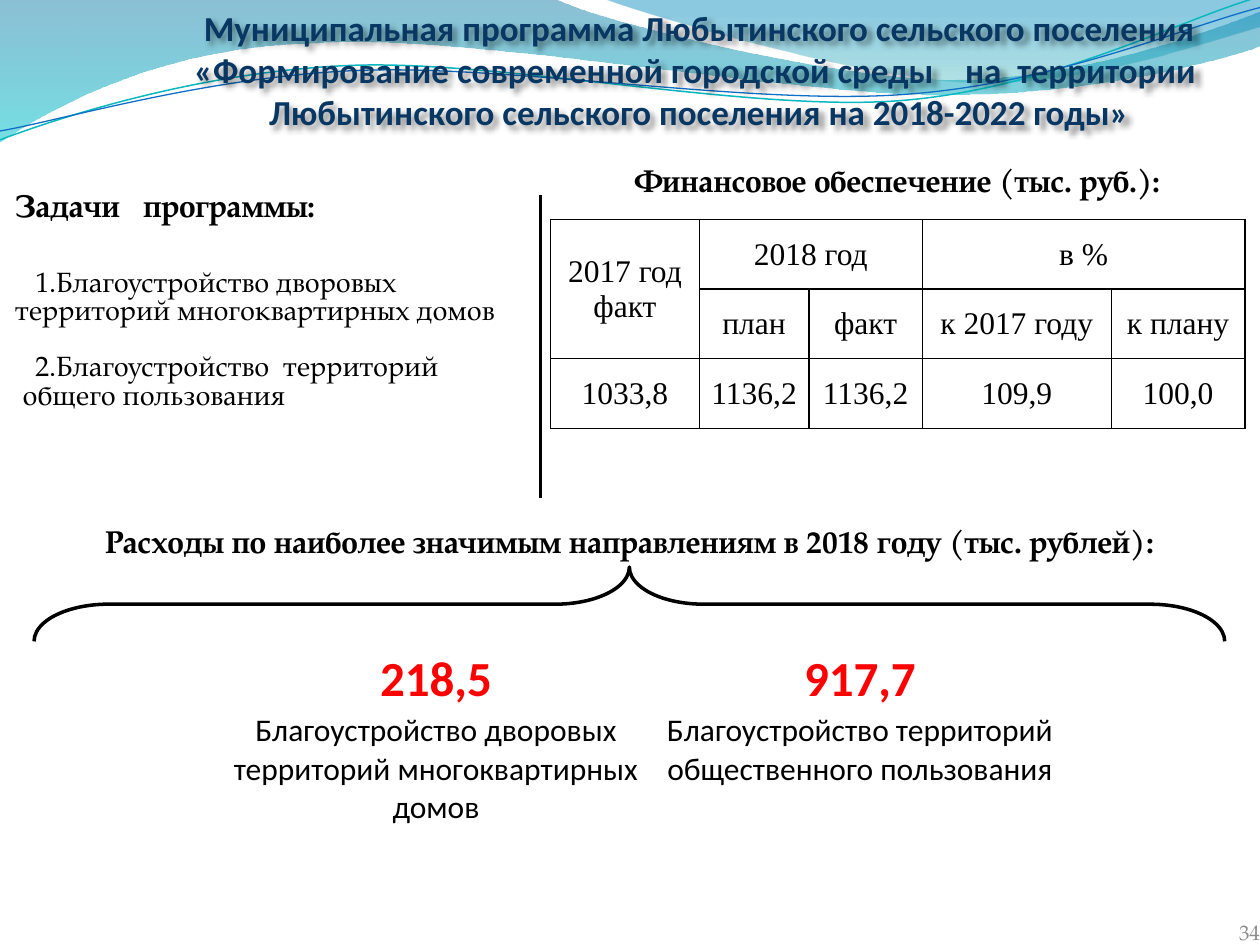
import math

from lxml import etree
from pptx import Presentation
from pptx import util as u
from pptx.dml.color import RGBColor
from pptx.enum import shapes, text
from pptx.oxml.ns import qn

SERIF, SANS, TABLE_FONT = "TeX Gyre Pagella", "Calibri", "Times New Roman"
CENTER, RIGHT = text.PP_ALIGN.CENTER, text.PP_ALIGN.RIGHT
TOP, MIDDLE, BOTTOM = (text.MSO_ANCHOR.TOP, text.MSO_ANCHOR.MIDDLE,
                       text.MSO_ANCHOR.BOTTOM)
WAVE_TILT = -2.7


def color(value):
    return RGBColor.from_string(value)


def add_node(parent, tag, **attributes):
    return etree.SubElement(parent, qn(tag), attributes)


def write(paragraph, words, size, font=SERIF, fill="000000", bold=False, **layout):
    run = paragraph.add_run()
    run.text = words
    for name, value in dict(size=u.Pt(size), name=font, bold=bold).items():
        setattr(run.font, name, value)
    run.font.color.rgb = color(fill)
    for name, value in layout.items():
        setattr(paragraph, name, value)


def add_text(slide, box, words, size, anchor=TOP, margins=(0.1, 0.05), **style):
    shape = slide.shapes.add_textbox(*map(u.Inches, box))
    horizontal, vertical = map(u.Inches, margins)
    settings = dict(word_wrap=True, vertical_anchor=anchor,
                    margin_left=horizontal, margin_right=horizontal,
                    margin_top=vertical, margin_bottom=vertical)
    for name, value in settings.items():
        setattr(shape.text_frame, name, value)
    write(shape.text_frame.paragraphs[0], words, size, **style)
    return shape


def add_table(slide, left, top, columns, rows):
    frame = slide.shapes.add_table(len(rows), len(columns), u.Inches(left), u.Inches(top),
                                   u.Inches(sum(columns)), u.Inches(sum(rows)))
    table = frame.table
    table.first_row = table.horz_banding = False
    for column, width in zip(table.columns, columns):
        column.width = u.Inches(width)
    for row, height in zip(table.rows, rows):
        row.height = u.Inches(height)
    return table


def format_cell(cell, anchor=TOP, margin=0.01, edges="", width=1):
    """Draw only the named edges, a string of the letters L, R, T and B."""
    properties = cell._tc.get_or_add_tcPr()
    for edge in "LRTB":
        line = add_node(properties, f"a:ln{edge}", w=str(u.Pt(width)))
        if edge in edges:
            add_node(add_node(line, "a:solidFill"), "a:srgbClr", val="000000")
        else:
            add_node(line, "a:noFill")
    cell.fill.background()
    cell.vertical_anchor = anchor
    for side in ("left", "right", "top", "bottom"):
        setattr(cell, f"margin_{side}", u.Inches(margin))


def add_curve(slide, start, segments, close):
    """Outline of straight segments (one point) and cubic segments (three points)."""
    ends = [tuple(map(u.Inches, segment[-1])) for segment in segments]
    builder = slide.shapes.build_freeform(*map(u.Inches, start), scale=1.0)
    builder.add_line_segments(ends, close=close)
    shape = builder.convert_to_shape()
    shape.shadow.inherit = False
    lines = list(shape._element.iter(qn("a:lnTo")))
    for line, segment in zip(lines, segments):
        if len(segment) == 3:
            curve = etree.Element(qn("a:cubicBezTo"))
            for x, y in segment:
                add_node(curve, "a:pt", x=str(u.Inches(x) - shape.left),
                         y=str(u.Inches(y) - shape.top))
            line.getparent().replace(line, curve)
    return shape


def add_wave(slide, start, segments, stops):
    """Area with a top-to-bottom gradient of (position, colour, opacity) stops in percent."""
    shape = add_curve(slide, start, segments, True)
    shape.line.fill.background()
    shape.fill.gradient()
    gradient = shape._element.spPr.find(qn("a:gradFill"))
    for child in list(gradient):
        gradient.remove(child)
    stop_list = add_node(gradient, "a:gsLst")
    for position, value, opacity in stops:
        stop = add_node(stop_list, "a:gs", pos=str(position * 1000))
        add_node(add_node(stop, "a:srgbClr", val=value), "a:alpha", val=str(opacity * 1000))
    add_node(gradient, "a:lin", ang="5400000", scaled="0")


def add_wave_line(slide, center, start, segments, value, width):
    """Points are where they end up after the tilt about the center."""
    cosine, sine = (f(math.radians(-WAVE_TILT)) for f in (math.cos, math.sin))

    def level(point):
        x, y = point[0] - center[0], point[1] - center[1]
        return center[0] + x * cosine - y * sine, center[1] + x * sine + y * cosine

    shape = add_curve(slide, level(start),
                      [[level(point) for point in segment] for segment in segments], False)
    shape.rotation = WAVE_TILT
    shape.fill.background()
    shape.line.color.rgb = color(value)
    shape.line.width = u.Pt(width)


def add_header_waves(slide):
    add_wave(slide, (0, 0), [
        [(4.4, -0.01)],
        [(4.76, 0.17), (6.64, 0.63), (7.58, 0.63)],
        [(8.53, 0.63), (9.58, 0.26), (10, 0.09)],
        [(10.01, 0.36)],
        [(9.83, 0.44), (8.7, 0.76), (7.46, 0.75)],
        [(6.22, 0.75), (3.82, 0.28), (2.57, 0.34)],
        [(1.29, 0.36), (0.46, 0.83), (-0.01, 1.13)],
    ], [(0, "0074A1", 45), (100, "00C6CF", 55)])
    add_wave(slide, (4.79, -0.01), [
        [(5.09, 0.11), (6.82, 0.62), (7.69, 0.65)],
        [(8.56, 0.69), (9.61, 0.32), (10, 0.21)],
        [(10, 0)],
    ], [(20, "008BBF", 45), (100, "00A1A9", 30)])
    add_wave_line(slide, (4.99, 0.57), (0, 1.11), [
        [(0.48, 0.93), (1.58, 0.57), (2.77, 0.52)],
        [(3.95, 0.47), (5.93, 0.89), (7.13, 0.8)],
        [(8.33, 0.71), (9.38, 0.15), (9.98, -0.02)],
    ], "0AB8BF", 0.85)
    add_wave_line(slide, (5, 0.59), (0, 1.04), [
        [(0.47, 0.96), (1.64, 0.61), (2.83, 0.56)],
        [(4.03, 0.51), (5.97, 0.84), (7.17, 0.75)],
        [(8.36, 0.67), (9.41, 0.21), (10, 0.06)],
    ], "0F6FC6", 0.75)


def add_title(slide, box):
    shape = add_text(slide, box, "Муниципальная программа Любытинского сельского поселения "
                     "«Формирование современной городской среды    на  территории  "
                     "Любытинского сельского поселения на 2018-2022 годы»",
                     20, font=SANS, fill="083763", bold=True, alignment=CENTER)
    effects = add_node(shape._element.spPr, "a:effectLst")
    shadow = add_node(effects, "a:outerShdw", blurRad="38100", dist="38100", dir="2700000")
    add_node(add_node(shadow, "a:srgbClr", val="000000"), "a:alpha", val="43000")


def add_funding(slide, left, top):
    table = add_table(slide, left, top, [1.18, 0.87, 0.9, 1.5, 1.06], [2.21 / 4] * 4)
    rows = [["Финансовое обеспечение (тыс. руб.):"],
            ["2017 год факт", "2018 год", "", "в %", ""],
            ["", "план", "факт", "к 2017 году", "к плану"],
            ["1033,8", "1136,2", "1136,2", "109,9", "100,0"]]
    for first, last in [((0, 0), (0, 4)), ((1, 0), (2, 0)), ((1, 1), (1, 2)), ((1, 3), (1, 4))]:
        table.cell(*first).merge(table.cell(*last))
    for index, row in enumerate(table.rows):
        heading = index == 0
        for cell in row.cells:
            format_cell(cell, MIDDLE, 0.01 if index == 3 else 0.04, "B" if heading else "LRTB")
        for cell, words in zip(row.cells, rows[index]):
            if words:
                write(cell.text_frame.paragraphs[0], words, 18, bold=heading,
                      font=SERIF if heading else TABLE_FONT, alignment=CENTER)


def add_tasks(slide, left, top):
    table = add_table(slide, left, top, [4.17], [0.61, 1.79])
    heading, tasks = table.cell(0, 0), table.cell(1, 0)
    for cell in (heading, tasks):
        format_cell(cell, margin=0, edges="R", width=2.25)
    write(heading.text_frame.paragraphs[0], "Задачи   программы:", 18, bold=True)
    # words, left margin, first-line indent, space before
    items = [("1.Благоустройство дворовых территорий многоквартирных домов", 0, 0.16, 0),
             ("2.Благоустройство  территорий", 0, 0.16, 16),
             ("общего пользования", 0.06, 0, 0)]
    frame = tasks.text_frame
    for index, (words, margin, indent, space) in enumerate(items):
        paragraph = frame.add_paragraph() if index else frame.paragraphs[0]
        write(paragraph, words, 16, space_before=u.Pt(space))
        properties = paragraph._p.get_or_add_pPr()
        properties.set("marL", str(u.Inches(margin)))
        properties.set("indent", str(u.Inches(indent)))


def add_brace(slide, box):
    """Right brace turned upwards; the box is the one before turning."""
    brace = slide.shapes.add_shape(shapes.MSO_SHAPE.RIGHT_BRACE, *map(u.Inches, box))
    brace.rotation = 270
    brace.adjustments[0], brace.adjustments[1] = 1, 0.5
    brace.shadow.inherit = False
    brace.fill.background()
    brace.line.color.rgb = color("000000")
    brace.line.width = u.Pt(2)


def add_expenses(slide, left, top):
    table = add_table(slide, left, top, [3.54, 3.19], [0.71, 1.43])
    expenses = [("218,5", "Благоустройство дворовых территорий многоквартирных домов"),
                ("917,7", "Благоустройство территорий общественного пользования")]
    for column, (amount, purpose) in enumerate(expenses):
        for row, words, anchor, style in [
                (0, amount, BOTTOM, dict(size=28, fill="FF0000", bold=True)),
                (1, purpose, TOP, dict(size=18))]:
            cell = table.cell(row, column)
            format_cell(cell, anchor)
            write(cell.text_frame.paragraphs[0], words, font=SANS, alignment=CENTER, **style)


def main():
    presentation = Presentation()
    presentation.slide_width, presentation.slide_height = u.Inches(10), u.Inches(7.5)
    slide = presentation.slides.add_slide(presentation.slide_layouts[6])
    add_header_waves(slide)
    add_title(slide, (0.55, 0, 10, 0.84))
    add_text(slide, (0, 4.1, 10, 0.39),
             "Расходы по наиболее значимым направлениям в 2018 году (тыс. рублей):",
             18, MIDDLE, bold=True, alignment=CENTER)
    add_funding(slide, 4.37, 1.19)
    add_brace(slide, (4.7, 0.07, 0.59, 9.45))
    add_tasks(slide, 0.12, 1.55)
    add_expenses(slide, 1.69, 4.93)
    add_text(slide, (7.67, 7.29, 2.33, 0.21), "34", 12, BOTTOM, (0, 0),
             fill="8C8C8C", alignment=RIGHT)
    presentation.save("out.pptx")


if __name__ == "__main__":
    main()
